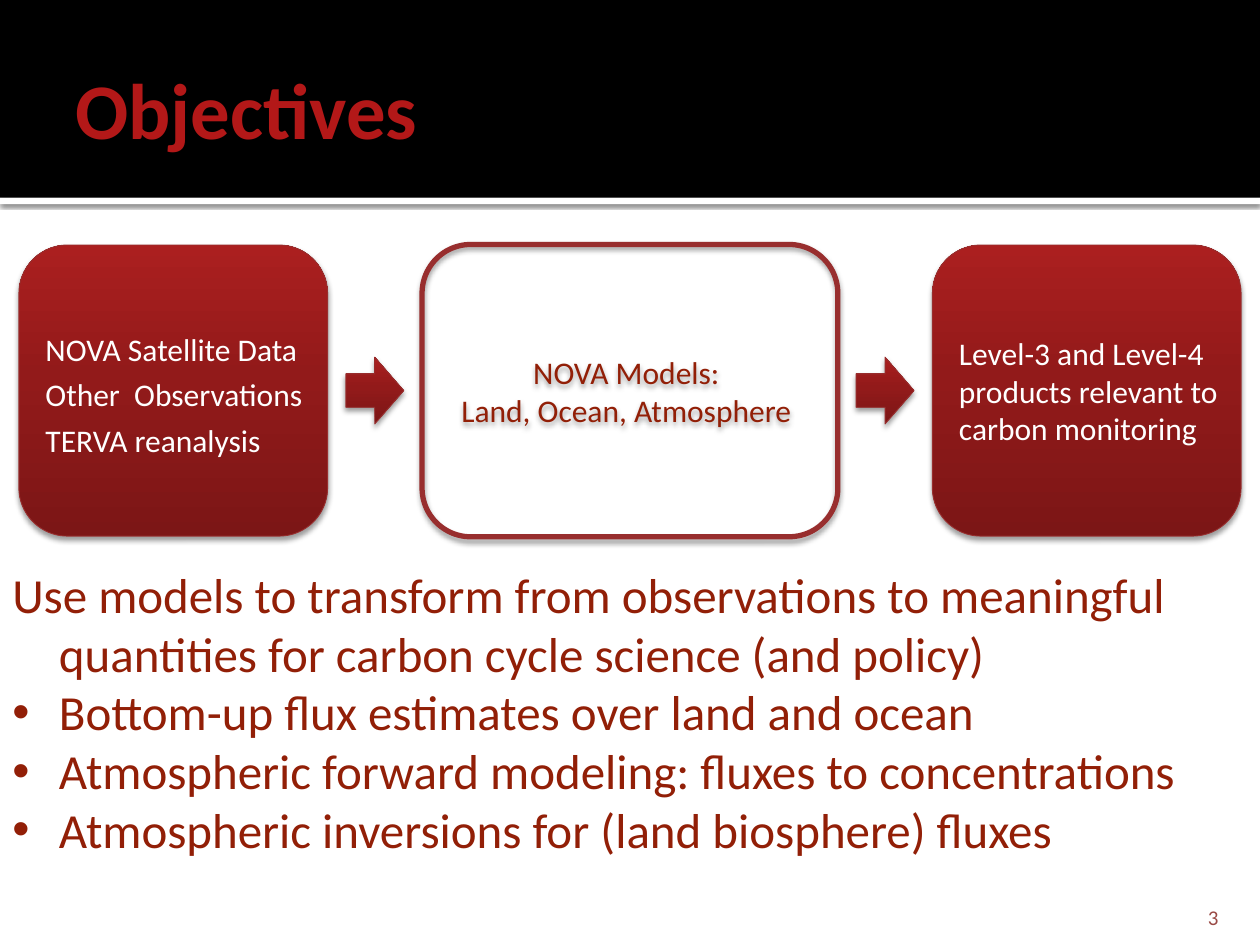
from lxml.etree import SubElement
from pptx import Presentation
from pptx.dml.color import RGBColor
from pptx.enum.shapes import MSO_SHAPE as Shape
from pptx.enum.text import MSO_ANCHOR as Anchor, PP_ALIGN as Align
from pptx.oxml.ns import qn
from pptx.util import Inches, Pt

WIDE, HIGH = 10, 7.5
FONT, RED, EDGE = "Calibri", "921F07", "982E2E"
STOPS = [(0, "7C1616"), (55, "921A1A"), (100, "AB1F1F")]
SOFT = ("000000", 38, 3.1, 2)  # colour, opacity %, blur pt, distance pt
RULE = ("000000", 60, 2.5, 0.8)

# Content
TITLE = "Objectives"
INPUTS = ["NOVA Satellite Data", "Other  Observations", "TERVA reanalysis"]
MODELS = ["NOVA Models: ", "Land, Ocean, Atmosphere "]
OUTPUTS = ["Level-3 and Level-4 products relevant to carbon monitoring"]
LEAD = ("Use models to transform from observations to meaningful "
        "quantities for carbon cycle science (and policy)")
POINTS = ["Bottom-up flux estimates over land and ocean",
          "Atmospheric forward modeling: fluxes to concentrations",
          "Atmospheric inversions for (land biosphere) fluxes"]
NUMBER = "3"

# Flow row: widths and heights, one equal gap between parts
EDGE_GAP, GAP, MID = 0.15, 0.145, 3.1
BOX, CORE, ARROW = (2.45, 2.31), (3.3, 2.32), (0.46, 0.53)
FLOW = [(BOX, INPUTS), (ARROW, []), (CORE, MODELS), (ARROW, []), (BOX, OUTPUTS)]


def rgb(code):
    return RGBColor.from_string(code)


def shade(shape, look):
    color, alpha, blur, dist = look
    shape.shadow.inherit = False
    effects = shape._element.spPr.find(qn("a:effectLst"))
    outer = SubElement(effects, qn("a:outerShdw"), blurRad=str(Pt(blur)),
                       dist=str(Pt(dist)), dir="5400000", rotWithShape="0")
    tone = SubElement(outer, qn("a:srgbClr"), val=color)
    SubElement(tone, qn("a:alpha"), val=str(alpha * 1000))


def blend(shape):
    shape.fill.gradient()
    shape.fill.gradient_angle = 90
    stops = shape._element.spPr.find(qn("a:gradFill")).find(qn("a:gsLst"))
    for old in list(stops):
        stops.remove(old)
    for pos, color in STOPS:
        stop = SubElement(stops, qn("a:gs"), pos=str(pos * 1000))
        SubElement(stop, qn("a:srgbClr"), val=color)


def draw(slide, kind, area, fill=None, line=None):
    shape = slide.shapes.add_shape(kind, *map(Inches, area))
    shape.shadow.inherit = False
    if fill == "blend":
        blend(shape)
    elif fill:
        shape.fill.solid()
        shape.fill.fore_color.rgb = rgb(fill)
    else:
        shape.fill.background()
    if line:
        shape.line.color.rgb = rgb(EDGE)
        shape.line.width = Pt(line)
    else:
        shape.line.fill.background()
    return shape


def write(shape, lines, size, color, anchor=Anchor.MIDDLE, align=Align.LEFT,
          pads=(0.1, 0.05, 0.1, 0.05), bold=False, space=None):
    frame = shape.text_frame
    frame.word_wrap = True
    frame.vertical_anchor = anchor
    (frame.margin_left, frame.margin_top,
     frame.margin_right, frame.margin_bottom) = map(Inches, pads)
    for i, line in enumerate(lines):
        para = frame.add_paragraph() if i else frame.paragraphs[0]
        para.alignment = align
        if space:
            para.line_spacing = space
        run = para.add_run()
        run.text = line
        run.font.name, run.font.size, run.font.bold = FONT, Pt(size), bold
        run.font.color.rgb = rgb(color)
    return frame.paragraphs


def label(slide, area, *args, **opts):
    return write(slide.shapes.add_textbox(*map(Inches, area)), *args, **opts)


def main():
    deck = Presentation()
    deck.slide_width, deck.slide_height = Inches(WIDE), Inches(HIGH)
    slide = deck.slides.add_slide(deck.slide_layouts[6])

    # Header band, rule and title
    band = 1.57
    rule = draw(slide, Shape.RECTANGLE, (0, band, WIDE, 0.05), "FFFFFF")
    shade(rule, RULE)
    draw(slide, Shape.RECTANGLE, (0, 0, WIDE, band), "000000")
    label(slide, (0.5, 0.17, 9, 1.37), [TITLE], 45, "B31818",
          pads=(0.1, 0.05, 0.05, 0.05), bold=True)

    # Flow from observations through models to products
    left = EDGE_GAP
    for size, lines in FLOW:
        wide, high = size
        core = size == CORE
        kind = Shape.RIGHT_ARROW if size == ARROW else Shape.ROUNDED_RECTANGLE
        part = draw(slide, kind, (left, MID - high / 2, wide, high),
                    None if core else "blend", 3 if core else 0.5)
        shade(part, SOFT)
        if core:
            write(part, lines, 18, RED, align=Align.CENTER)
        elif lines:
            write(part, lines, 18, "FFFFFF", pads=(0.1, 0.05, 0, 0.05),
                  space=1.2 if lines is INPUTS else None)
        left += wide + GAP

    # Goals, with hanging indents
    goals = label(slide, (0, 4.43, WIDE, 2.46), [LEAD] + POINTS, 28, RED,
                  anchor=Anchor.TOP)
    for i, para in enumerate(goals):
        props = para._p.get_or_add_pPr()
        props.set("marL", str(Inches(0.37)))
        props.set("indent", str(-Inches(0.37)))
        if i:
            SubElement(props, qn("a:buFont"), typeface="Arial")
            SubElement(props, qn("a:buChar"), char="•")

    # Slide number
    label(slide, (8.97, 7.08, 0.8, 0.3), [NUMBER], 12, "9A4A45",
          anchor=Anchor.BOTTOM, align=Align.RIGHT, pads=(0.1, 0.05, 0.1, 0))
    deck.save("out.pptx")


if __name__ == "__main__":
    main()
